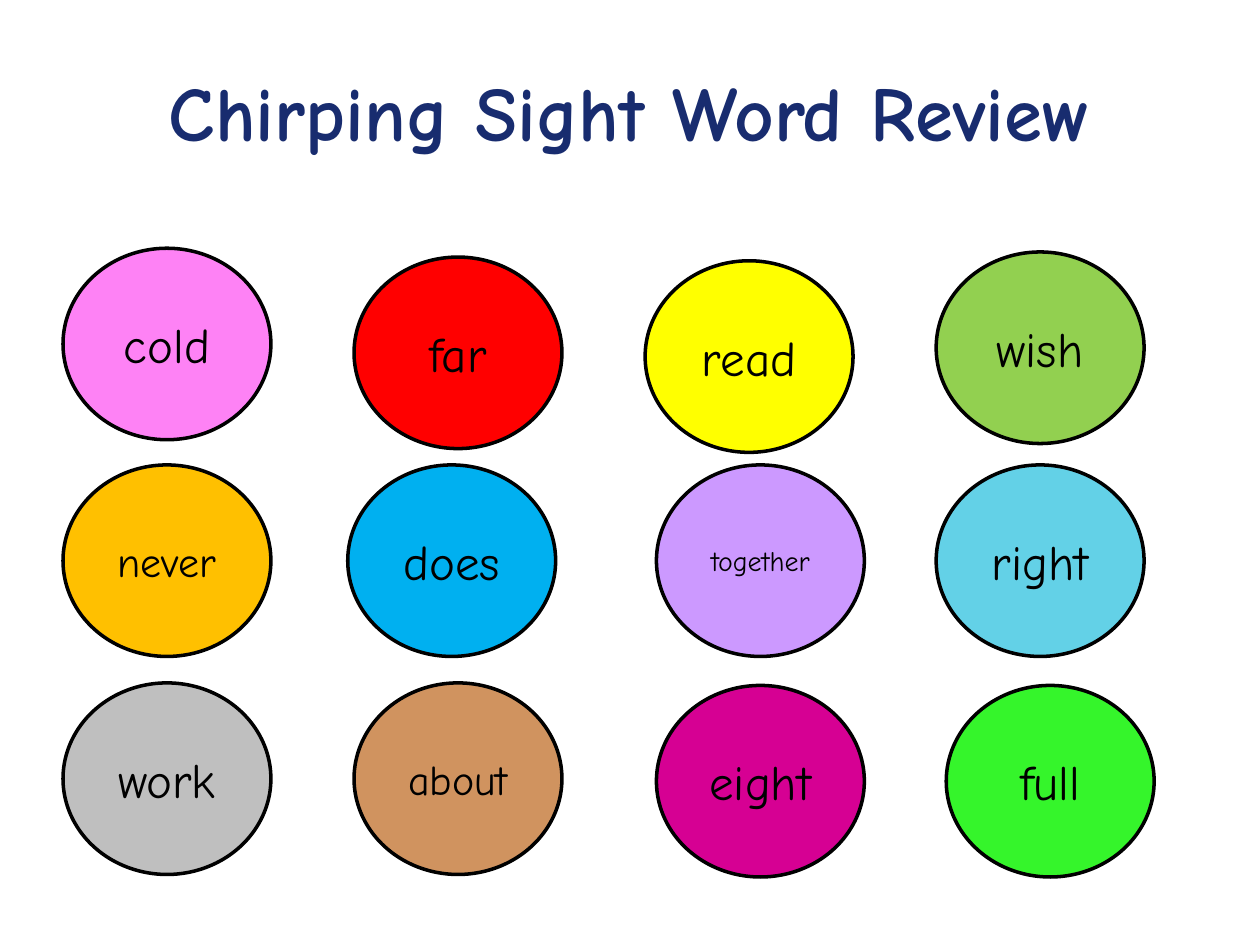
from pptx import Presentation
from pptx import util as u
from pptx.dml.color import RGBColor
from pptx.enum import shapes, text

HUES = {
    "navy": "182C6F", "black": "000000", "pink": "FE82F5", "red": "FF0000",
    "yellow": "FFFF00", "olive": "92D050", "gold": "FFC000", "blue": "00B0F0",
    "lilac": "CC99FF", "aqua": "63D1E7", "gray": "BFBFBF", "tan": "D0935F",
    "plum": "D60093", "green": "35F52B",
}

WORDS = [
    ("cold", "pink", 0.5, 1.97, 28),
    ("far", "red", 2.81, 2.04, 28),
    ("read", "yellow", 5.12, 2.07, 28),
    ("wish", "olive", 7.43, 2, 28),
    ("never", "gold", 0.5, 3.69, 24),
    ("does", "blue", 2.76, 3.69, 28),
    ("together", "lilac", 5.21, 3.69, 16),
    ("right", "aqua", 7.43, 3.69, 28),
    ("work", "gray", 0.5, 5.42, 28),
    ("about", "tan", 2.81, 5.42, 24),
    ("eight", "plum", 5.21, 5.44, 28),
    ("full", "green", 7.51, 5.44, 28),
]


class Board:
    """Holds the style and the current slide."""

    font = "Comic Neue"
    wide, high = 1.65, 1.52

    def __init__(self, slide):
        self.slide = slide

    def hue(self, name):
        return RGBColor.from_string(HUES[name])

    def label(self, shape, words, size, hue, bold=False):
        frame = shape.text_frame
        frame.word_wrap = True
        frame.vertical_anchor = text.MSO_ANCHOR.MIDDLE
        para = frame.paragraphs[0]
        para.alignment = text.PP_ALIGN.CENTER
        run = para.add_run()
        run.text = words
        run.font.name = self.font
        run.font.size = u.Pt(size)
        run.font.bold = bold
        run.font.color.rgb = self.hue(hue)
        return para

    def title(self, words):
        box = self.slide.shapes.add_textbox(
            u.Inches(0.5), u.Inches(0.3), u.Inches(9), u.Inches(1.04))
        para = self.label(box, words, 44, "navy", True)
        para.line_spacing = 1.15
        para.space_after = u.Pt(10)

    def disc(self, word, hue, left, top, size):
        disc = self.slide.shapes.add_shape(
            shapes.MSO_SHAPE.OVAL, u.Inches(left), u.Inches(top),
            u.Inches(self.wide), u.Inches(self.high))
        disc.shadow.inherit = False
        disc.fill.solid()
        disc.fill.fore_color.rgb = self.hue(hue)
        disc.line.color.rgb = self.hue("black")
        disc.line.width = u.Pt(2)
        self.label(disc, word, size, "black")


def main():
    deck = Presentation()
    deck.slide_width, deck.slide_height = u.Inches(10), u.Inches(7.5)
    board = Board(deck.slides.add_slide(deck.slide_layouts[6]))
    board.title("Chirping Sight Word Review")
    for word in WORDS:
        board.disc(*word)
    deck.save("out.pptx")


if __name__ == "__main__":
    main()
